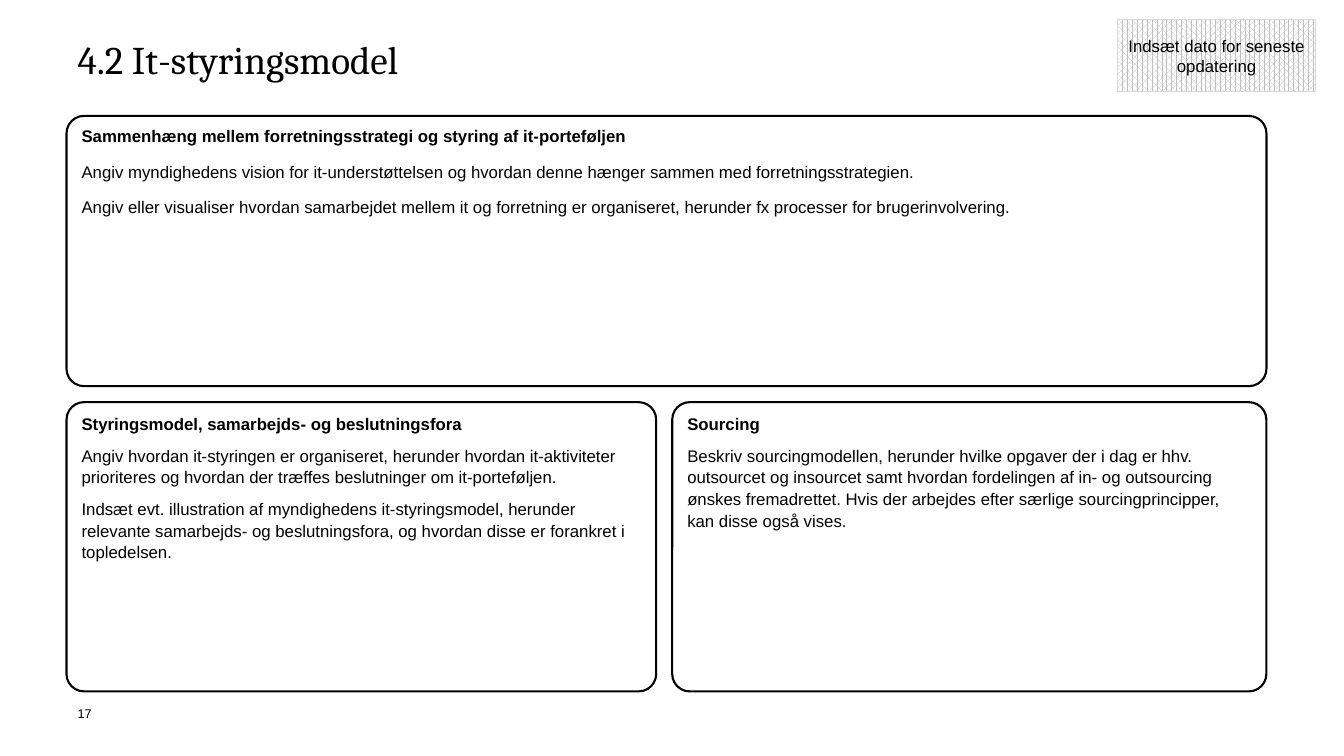
import pptx
import pptx.util
import pptx.dml.color
import pptx.enum.dml
import pptx.enum.shapes
import pptx.enum.text

Pt = pptx.util.Pt
KIND = pptx.enum.shapes.MSO_SHAPE
ALIGN = pptx.enum.text.PP_ALIGN
ANCHOR = pptx.enum.text.MSO_ANCHOR

TITLE = "4.2 It-styringsmodel"
DATE = "Indsæt dato for seneste opdatering"
NUMBER = "17"
STRATEGY = [
    "Sammenhæng mellem forretningsstrategi og styring af it-porteføljen",
    "Angiv myndighedens vision for it-understøttelsen og hvordan denne hænger sammen med forretningsstrategien.",
    "Angiv eller visualiser hvordan samarbejdet mellem it og forretning er organiseret, herunder fx processer for brugerinvolvering.",
]
MODEL = [
    "Styringsmodel, samarbejds- og beslutningsfora",
    "Angiv hvordan it-styringen er organiseret, herunder hvordan it-aktiviteter prioriteres og hvordan der træffes beslutninger om it-porteføljen.",
    "Indsæt evt. illustration af myndighedens it-styringsmodel, herunder relevante samarbejds- og beslutningsfora, og hvordan disse er forankret i topledelsen.",
]
SOURCING = [
    "Sourcing",
    "Beskriv sourcingmodellen, herunder hvilke opgaver der i dag er hhv. outsourcet og insourcet samt hvordan fordelingen af in- og outsourcing ønskes fremadrettet. Hvis der arbejdes efter særlige sourcingprincipper, kan disse også vises.",
]

LEFT, RIGHT, GAP = 47.5, 904.6, 11.5
TOP, HIGH, LOW = 82.8, 193, 206.6
SPLIT = 468.7
ROUND = 12.5


def color(code):
    return pptx.dml.color.RGBColor.from_string(code)


def write(shape, lines, size=12, font="Arial", space=0, pitch=1.0,
          align=ALIGN.LEFT, anchor=ANCHOR.TOP, inset=(7.2, 3.6)):
    frame = shape.text_frame
    frame.word_wrap = True
    frame.vertical_anchor = anchor
    frame.margin_left = frame.margin_right = Pt(inset[0])
    frame.margin_top = frame.margin_bottom = Pt(inset[1])
    for i, line in enumerate(lines):
        para = frame.add_paragraph() if i else frame.paragraphs[0]
        para.text = line
        para.alignment = align
        para.line_spacing = pitch
        para.space_before = Pt(space if i else 0)
        para.font.name = font
        para.font.size = Pt(size)
        para.font.bold = len(lines) > 1 and i == 0
        para.font.color.rgb = color("000000")


def outline(kind, x, y, w, h, line, width):
    """Add an unfilled shape with the given line."""
    shape = slide.shapes.add_shape(kind, Pt(x), Pt(y), Pt(w), Pt(h))
    shape.shadow.inherit = False
    shape.fill.background()
    shape.line.color.rgb = color(line)
    shape.line.width = Pt(width)
    return shape


def panel(x, y, w, h, lines, space, pitch):
    shape = outline(KIND.ROUNDED_RECTANGLE, x, y, w, h, "000000", 1.5)
    shape.adjustments[0] = ROUND / h
    write(shape, lines, space=space, pitch=pitch)


def label(x, y, w, h, text, size, font, pitch=1.0):
    box = slide.shapes.add_textbox(Pt(x), Pt(y), Pt(w), Pt(h))
    write(box, [text], size, font, pitch=pitch, inset=(0, 0))


deck = pptx.Presentation()
deck.slide_width, deck.slide_height = Pt(960), Pt(540)
slide = deck.slides.add_slide(deck.slide_layouts[6])

label(55.4, 504, 22.3, 21.6, NUMBER, 9, "Arial")
label(55.4, 28.8, 849.6, 73.4, TITLE, 28, "Cambria", 0.9)

second = TOP + HIGH + GAP
panel(LEFT, TOP, RIGHT - LEFT, HIGH, STRATEGY, 11, 1.0)
panel(LEFT, second, SPLIT - LEFT, LOW, MODEL, 7, 1.08)
panel(SPLIT + GAP, second, RIGHT - SPLIT - GAP, LOW, SOURCING, 7, 1.08)

stamp = outline(KIND.RECTANGLE, 798.5, 13.7, 141.1, 51.8, "D9D9D9", 0.5)
stamp.fill.patterned()
stamp.fill.pattern = pptx.enum.dml.MSO_PATTERN.PERCENT_70
stamp.fill.fore_color.rgb = color("BFBFBF")
stamp.fill.back_color.rgb = color("FFFFFF")
write(stamp, [DATE], align=ALIGN.CENTER, anchor=ANCHOR.MIDDLE)

deck.save("out.pptx")
